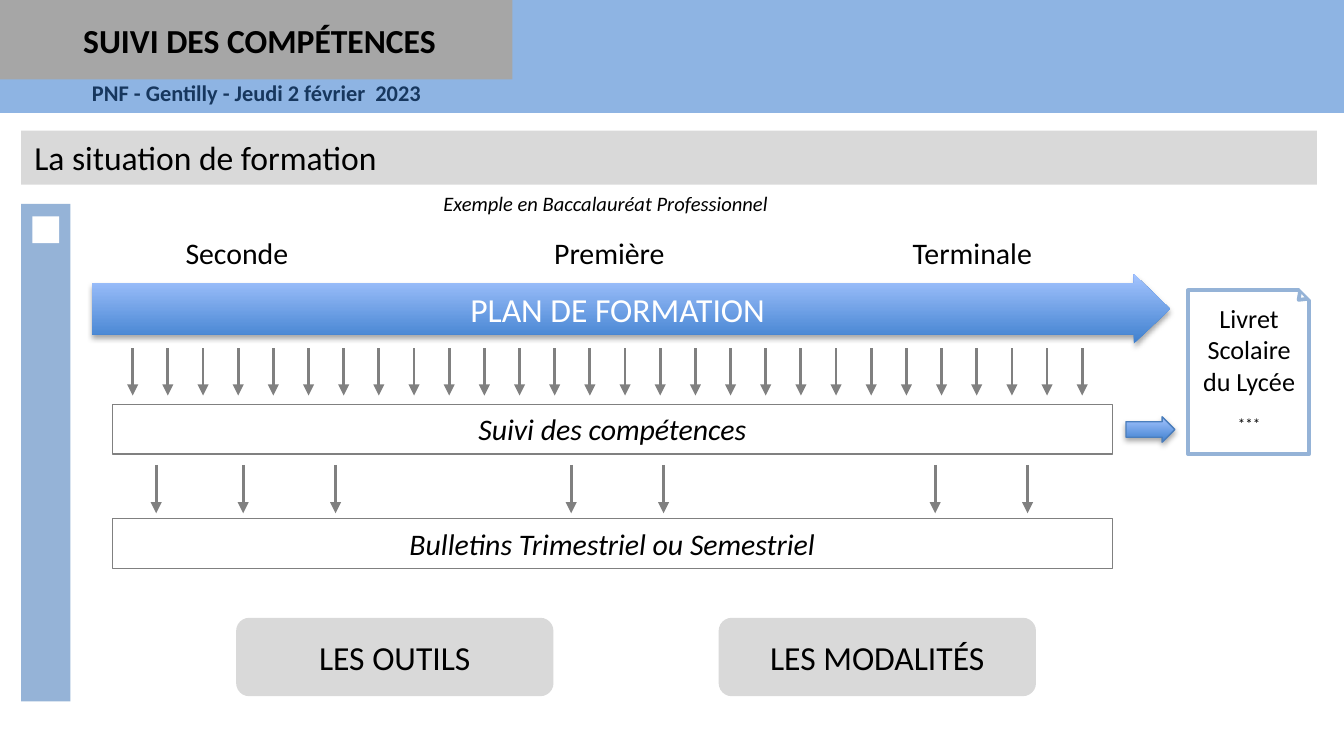
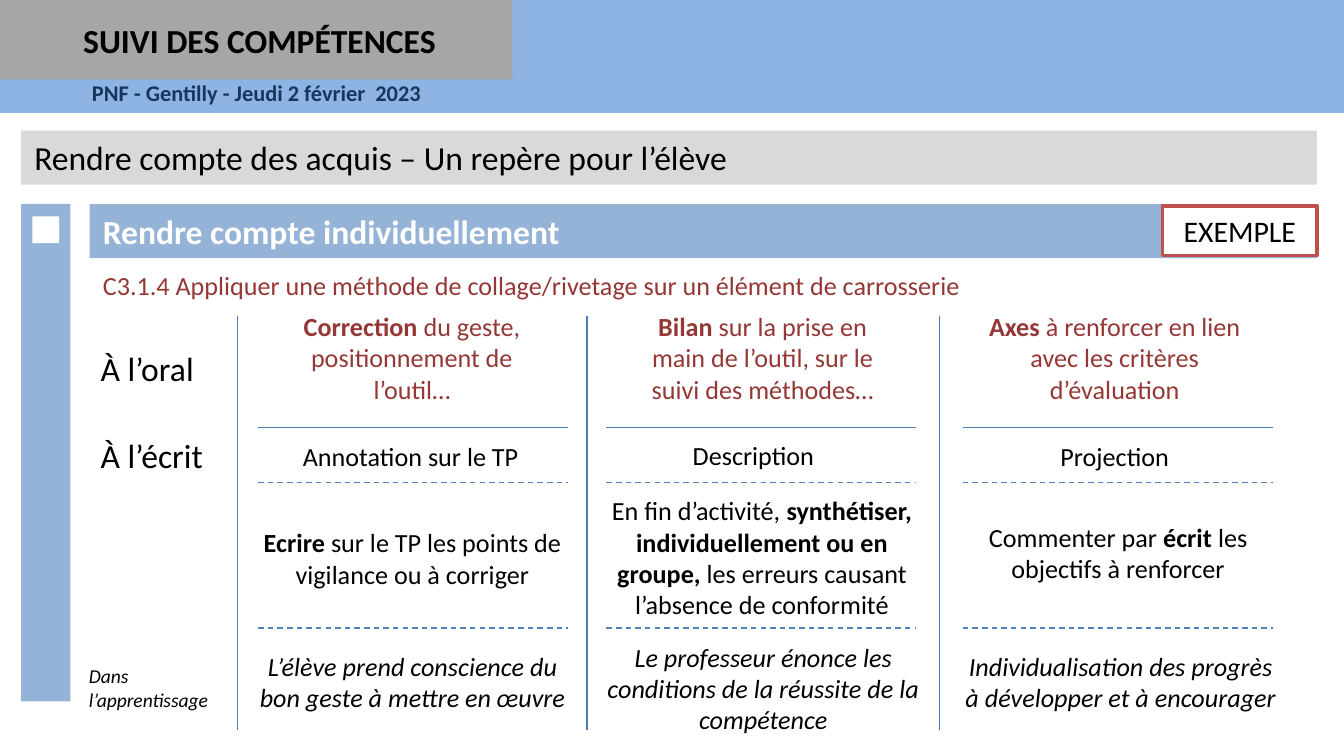
from lxml import etree
from pptx import Presentation
from pptx.dml.color import RGBColor
from pptx.enum import dml, shapes, text
from pptx.oxml import ns
from pptx.util import Pt

FONT = "Calibri"
BLACK, WHITE = "000000", "FFFFFF"
SKY, BLUE, NAVY = "8EB4E3", "95B3D7", "17375E"
LIGHT, SILVER, GREY = "D9D9D9", "A6A6A6", "808080"
RULE, DASH, MAROON, RED = "4B7EBC", "4F81BD", "953735", "C0504D"
LEFT, CENTER = text.PP_ALIGN.LEFT, text.PP_ALIGN.CENTER
FORM = shapes.MSO_SHAPE


def paint(color_format, value):
    color_format.rgb = RGBColor.from_string(value)


def subelement(parent, tag, **attributes):
    return etree.SubElement(parent, ns.qn(tag), attributes)


def style_para(para, size, color, bold, italic, align):
    para.alignment = align
    for span in para.runs:
        span.font.name = FONT
        span.font.size = Pt(size)
        span.font.italic = italic
        span.font.bold = bold or bool(span.font.bold)
        paint(span.font.color, color)


def write(box, content, size, color=BLACK, bold=False, italic=False,
          align=CENTER, middle=False, wrap=True):
    frame = box.text_frame
    frame.word_wrap = wrap
    frame.vertical_anchor = text.MSO_ANCHOR.MIDDLE if middle else text.MSO_ANCHOR.TOP
    frame.auto_size = (text.MSO_AUTO_SIZE.NONE if middle
                       else text.MSO_AUTO_SIZE.SHAPE_TO_FIT_TEXT)
    para = frame.paragraphs[0]
    parts = content.split("|")
    if len(parts) == 1:
        para.text = content
    else:
        for index, part in enumerate(parts):
            if part:
                span = para.add_run()
                span.text = part
                span.font.bold = index % 2 == 1
    style_para(para, size, color, bold, italic, align)


def add_label(page, place, content, size, **style):
    box = page.shapes.add_textbox(*map(Pt, place))
    write(box, content, size, **style)
    return box


def add_block(page, place, fill=None, line=None, width=0.75, form=FORM.RECTANGLE, turn=0):
    block = page.shapes.add_shape(form, *map(Pt, place))
    block.shadow.inherit = False
    block.rotation = turn
    if fill:
        block.fill.solid()
        paint(block.fill.fore_color, fill)
    else:
        block.fill.background()
    if line:
        paint(block.line.color, line)
        block.line.width = Pt(width)
    else:
        block.line.fill.background()
    return block


def add_glossy_arrow(page, place, adjustments, line=None):
    arrow = add_block(page, place, BLUE, line, form=FORM.RIGHT_ARROW)
    for index, value in enumerate(adjustments):
        arrow.adjustments[index] = value
    arrow.fill.gradient()
    arrow.fill.gradient_angle = 90
    for stop, color in zip(arrow.fill.gradient_stops, ("3F80CE", "A4C4FF")):
        paint(stop.color, color)
    effects = arrow.element.spPr.find(ns.qn("a:effectLst"))
    shadow = subelement(effects, "a:outerShdw", blurRad=str(Pt(3.1)),
                        dist=str(Pt(1.8)), dir="5400000", rotWithShape="0")
    shade = subelement(shadow, "a:srgbClr", val=BLACK)
    subelement(shade, "a:alpha", val="35000")
    return arrow


def add_line(page, start, end, color, width=0.75, dashed=False, arrow=False):
    line = page.shapes.add_connector(shapes.MSO_CONNECTOR.STRAIGHT,
                                     *map(Pt, (*start, *end)))
    paint(line.line.color, color)
    line.line.width = Pt(width)
    if dashed:
        line.line.dash_style = dml.MSO_LINE.DASH
    properties = line.element.spPr
    if arrow:
        subelement(properties.find(ns.qn("a:ln")), "a:tailEnd", type="triangle")
    subelement(properties, "a:effectLst")


def add_down_arrows(page, positions, top, bottom):
    for x in positions:
        add_line(page, (x, top), (x, bottom), GREY, 1.5, arrow=True)


def move_bands_to_layout(page, layout):
    for holder in list(layout.placeholders):
        if holder.placeholder_format.type != shapes.PP_PLACEHOLDER.TITLE:
            holder.element.getparent().remove(holder.element)
    bands = [
        add_block(page, (0, 0, 720, 60.5), SKY),
        add_block(page, (0, 0, 274.5, 42.5), SILVER),
        add_label(page, (0, 39, 275, 21.6), "PNF - Gentilly - Jeudi 2 février  2023",
                  12, color=NAVY, bold=True),
    ]
    for band in bands:
        layout.shapes.element.append(band.element)


def add_page(deck, layout, heading):
    page = deck.slides.add_slide(layout)
    title = page.shapes.title
    title.left, title.top, title.width, title.height = map(Pt, (37.4, 7.2, 205.2, 29))
    write(title, "SUIVI DES COMPÉTENCES", 18, bold=True, align=LEFT, wrap=False)
    write(add_block(page, (11.3, 70, 694.2, 29), LIGHT), heading, 18, align=LEFT)
    add_block(page, (11.3, 109.3, 26.4, 266.5), BLUE)
    add_block(page, (17.4, 116, 14.3, 14.3), WHITE)
    return page


def add_school_record(page):
    add_block(page, (636.4, 155.6, 65, 87.7), WHITE, BLUE, 2)
    add_block(page, (694, 157, 6.5, 4.3), WHITE, BLUE, 2, FORM.ISOSCELES_TRIANGLE, 226.9)
    add_block(page, (696.2, 152.6, 13, 5.8), WHITE, WHITE, 2, FORM.ISOSCELES_TRIANGLE, 45.6)
    box = add_label(page, (636.4, 158.4, 65.5, 77.8), "Livret Scolaire du Lycée", 14)
    stars = box.text_frame.add_paragraph()
    stars.text = "***"
    stars.space_before = Pt(9.8)
    style_para(stars, 8, BLACK, False, False, CENTER)


def build_training_page(page):
    add_label(page, (230.4, 98.6, 191.5, 20.9), "Exemple en Baccalauréat Professionnel",
              11, italic=True, align=LEFT)
    for left, year in ((56, "Seconde"), (255.6, "Première"), (450, "Terminale")):
        add_label(page, (left, 122.4, 141.8, 26.6), year, 16)
    for left, button in ((126.5, "LES OUTILS"), (385, "LES MODALITÉS")):
        block = add_block(page, (left, 331, 170, 42), LIGHT, form=FORM.ROUNDED_RECTANGLE)
        write(block, button, 18, middle=True)
    for top, stage in ((277.9, "Bulletins Trimestriel ou Semestriel"),
                       (216.7, "Suivi des compétences")):
        block = add_block(page, (60.2, top, 535.7, 26.6), line=GREY)
        write(block, stage, 16, italic=True)
    add_down_arrows(page, (83.7, 130.3, 179.8, 306, 355.5, 501, 550.5), 249.1, 275)
    add_down_arrows(page, [71.1 + 18.84 * index for index in range(28)], 186.5, 211.9)
    add_school_record(page)
    plan = add_glossy_arrow(page, (49.4, 146.9, 577.4, 37.2), (0.74, 0.52))
    write(plan, "PLAN DE FORMATION", 18, color=WHITE, middle=True)
    add_glossy_arrow(page, (603.2, 223.3, 26.2, 13.6), (0.61, 0.5), RULE)


def add_row(page, cells, width, height, **style):
    for left, top, content in cells:
        add_label(page, (left, top, width, height), content, 14, **style)


def build_report_page(page):
    write(add_block(page, (48, 109.3, 657.5, 29), BLUE), "Rendre compte individuellement",
          18, color=WHITE, bold=True, align=LEFT)
    write(add_block(page, (622.8, 110.3, 82.8, 26.6), WHITE, RED, 2), "EXEMPLE", 16)
    add_label(page, (48, 140.6, 509.8, 24.2),
              "C3.1.4 Appliquer une méthode de collage/rivetage sur un élément de carrosserie",
              14, color=MAROON, align=LEFT)
    for top, mode in ((183, "À l’oral"), (229.5, "À l’écrit")):
        add_label(page, (46.8, top, 79, 29), mode, 18, align=LEFT)
    add_label(page, (40.5, 352.3, 85, 32.4), "Dans l’apprentissage", 10.5,
              italic=True, align=LEFT)

    for divider, left in ((127.3, 138.3), (314.4, 324.9), (503.3, 515.8)):
        add_line(page, (divider, 169.2), (divider, 391), RULE)
        add_line(page, (left, 229), (left + 166, 229), RULE)
        for y in (258.5, 336.4):
            add_line(page, (left, y), (left + 166, y), DASH, dashed=True)

    add_row(page, [
        (143.3, 162.7, "|Correction| du geste, positionnement de l’outil…"),
        (331.2, 162.7, "|Bilan| sur la prise en main de l’outil, sur le suivi des méthodes…"),
        (519.8, 162.7, "|Axes |à renforcer en lien avec les critères d’évaluation"),
    ], 154.8, 58.2, color=MAROON)
    add_row(page, [
        (142.6, 232.6, "Annotation sur le TP"),
        (326.2, 232, "Description"),
        (519.8, 232.6, "Projection"),
    ], 154.8, 24.2)
    add_row(page, [
        (126.7, 278.6, "|Ecrire |sur le TP les points de vigilance ou à corriger"),
        (313.9, 261.4, "En fin d’activité, |synthétiser, individuellement ou en groupe, |"
                       "les erreurs causant l’absence de conformité"),
        (504.7, 275.8, "Commenter par |écrit| les objectifs à renforcer"),
    ], 188.6, 41.2)
    add_row(page, [
        (128.9, 344.9, "L’élève prend conscience du bon geste à mettre en œuvre"),
        (316.8, 339.8, "Le professeur énonce les conditions de la réussite de la compétence"),
        (508.3, 344.9, "Individualisation des progrès à développer et à encourager"),
    ], 184.3, 41.2, italic=True)


def main():
    deck = Presentation()
    deck.slide_width, deck.slide_height = Pt(720), Pt(405)
    layout = deck.slide_layouts[5]
    training = add_page(deck, layout, "La situation de formation")
    move_bands_to_layout(training, layout)
    build_training_page(training)
    report = add_page(deck, layout, "Rendre compte des acquis – Un repère pour l’élève")
    build_report_page(report)
    deck.save("out.pptx")


if __name__ == "__main__":
    main()
